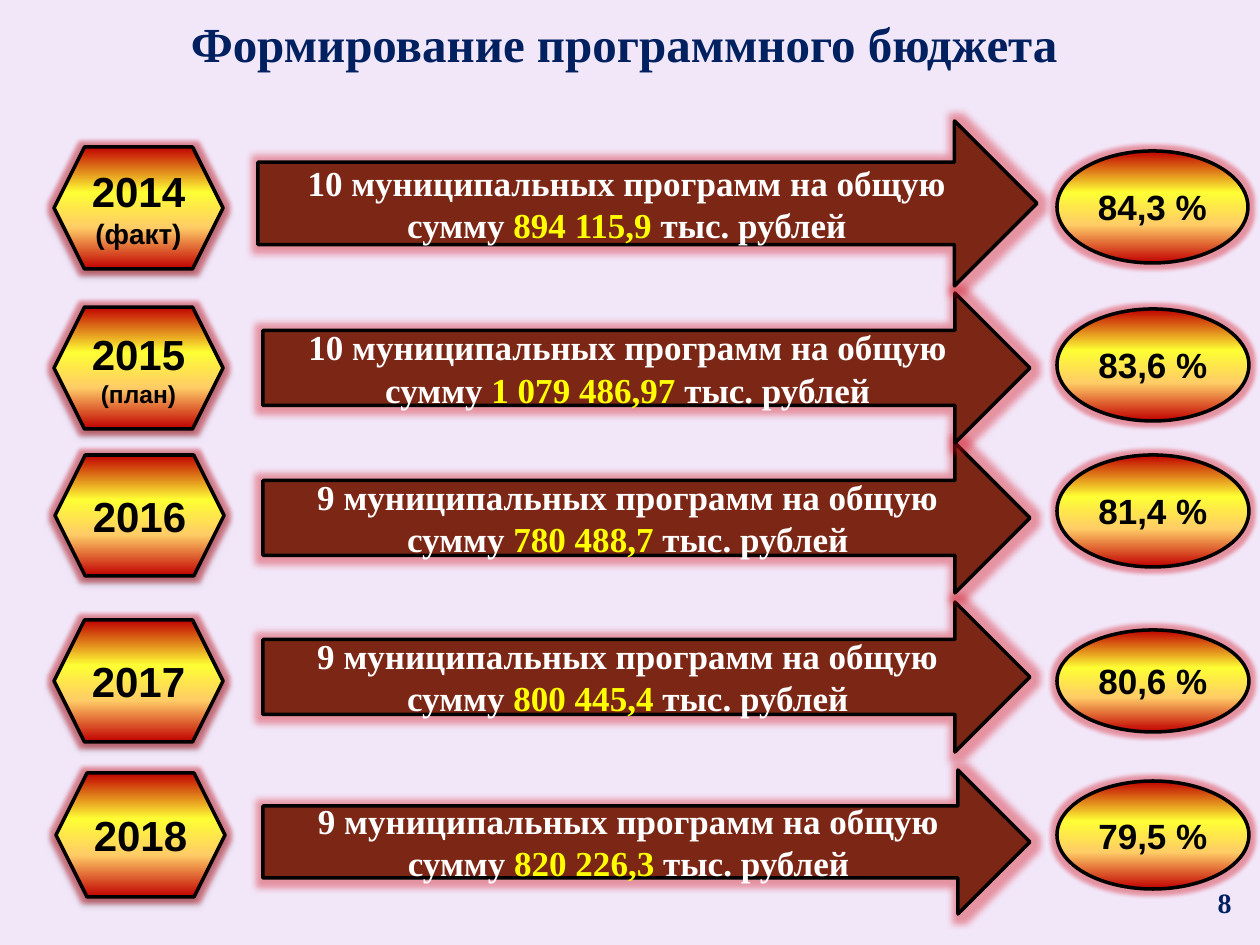
from lxml.etree import SubElement
from pptx import Presentation
from pptx.dml.color import RGBColor
from pptx.enum.shapes import MSO_SHAPE
from pptx.enum.text import MSO_ANCHOR, PP_ALIGN
from pptx.oxml.ns import qn
from pptx.util import Pt

SCALE = 914400 / 126
BLACK, NAVY, WHITE, GOLD = "000000", "002060", "FFFFFF", "FFFF00"
BROWN, GLOW = "7C2716", "D2131F"
STOPS = [(0, "C00000"), (34, "FFCC66"), (63, "FEFE34"), (100, "C00000")]
SERIF, SANS = "Times New Roman", "Arial"

ROWS = [
    ("2014", "(факт)", 16, 10, "894 115,9", "84,3 %",
     (54, 147, 169, 122), (258, 121, 779, 165), (1057, 151, 191, 112)),
    ("2015", "(план)", 14, 10, "1 079 486,97", "83,6 %",
     (54, 307, 169, 122), (263, 293, 767, 150), (1057, 309, 192, 112)),
    ("2016", "", 0, 9, "780 488,7", "81,4 %",
     (55, 455, 169, 121), (263, 443, 767, 150), (1057, 455, 192, 112)),
    ("2017", "", 0, 9, "800 445,4", "80,6 %",
     (54, 620, 169, 122), (263, 602, 767, 150), (1057, 630, 192, 102)),
    ("2018", "", 0, 9, "820 226,3", "79,5 %",
     (56, 773, 169, 124), (263, 770, 767, 144), (1057, 781, 192, 108)),
]


def px(n):
    return round(n * SCALE)


def rgb(code):
    return RGBColor.from_string(code)


def tint(node, code, alpha=100):
    color = SubElement(node, qn("a:srgbClr"), val=code)
    if alpha < 100:
        SubElement(color, qn("a:alpha"), val=str(alpha * 1000))


def shade(node):
    drop = SubElement(node, qn("a:outerShdw"), blurRad=str(Pt(3.1)), dist=str(Pt(1.8)),
                      dir="5400000", rotWithShape="0")
    tint(drop, BLACK, 35)


class Deck:
    """Holds the style and the current slide."""

    def __init__(self):
        self.file = Presentation()
        self.file.slide_width, self.file.slide_height = px(1260), px(945)
        self.slide = self.file.slides.add_slide(self.file.slide_layouts[5])
        fill = self.slide.background.fill
        fill.solid()
        fill.fore_color.rgb = rgb("F2E7F9")

    def text(self, shape, lines, align=PP_ALIGN.CENTER, **frame):
        body = shape.text_frame
        for key, val in {"word_wrap": True, **frame}.items():
            setattr(body, key, val)
        for i, line in enumerate(lines):
            para = body.add_paragraph() if i else body.paragraphs[0]
            para.alignment = align
            for words, size, face, color in line:
                run = para.add_run()
                run.text = words
                for key, val in {"size": Pt(size), "name": face, "bold": True}.items():
                    setattr(run.font, key, val)
                run.font.color.rgb = rgb(color)

    def title(self, words, box):
        shape = self.slide.shapes.title
        shape.left, shape.top, shape.width, shape.height = map(px, box)
        self.text(shape, [[(words, 28, SERIF, NAVY)]], vertical_anchor=MSO_ANCHOR.MIDDLE)
        props = shape.text_frame.paragraphs[0].runs[0].font._element
        effects = SubElement(props, qn("a:effectLst"))
        shade(effects)
        props.find(qn("a:solidFill")).addnext(effects)

    def label(self, words, box):
        shape = self.slide.shapes.add_textbox(*map(px, box))
        self.text(shape, [[(words, 16, SERIF, NAVY)]], PP_ALIGN.RIGHT)

    def shape(self, kind, box, lines, glow, fill=None, drop=False):
        shape = self.slide.shapes.add_shape(kind, *map(px, box))
        shape.shadow.inherit = False
        props = shape._element.spPr
        if fill:
            shape.fill.solid()
            shape.fill.fore_color.rgb = rgb(fill)
        else:
            shape.fill.gradient()
            shape.fill.gradient_angle = 90
            stops = props.find(qn("a:gradFill")).find(qn("a:gsLst"))
            stops.clear()
            for pos, code in STOPS:
                tint(SubElement(stops, qn("a:gs"), pos=str(pos * 1000)), code)
        shape.line.color.rgb = rgb(BLACK)
        shape.line.width = Pt(2)
        effects = props.find(qn("a:effectLst"))
        tint(SubElement(effects, qn("a:glow"), rad=str(Pt(glow))), GLOW, 40)
        if drop:
            shade(effects)
        self.text(shape, lines, vertical_anchor=MSO_ANCHOR.MIDDLE)

    def year(self, box, year, note, size):
        lines = [[(year, 24, SANS, BLACK)]]
        if note:
            lines.append([(note, size, SANS, BLACK)])
        self.shape(MSO_SHAPE.HEXAGON, box, lines, 5, drop=True)

    def arrow(self, box, count, total):
        parts = [("сумму ", WHITE), (total + " ", GOLD), ("тыс. рублей", WHITE)]
        lines = [[(f"{count} муниципальных программ на общую", 20, SERIF, WHITE)],
                 [(words, 20, SERIF, color) for words, color in parts]]
        self.shape(MSO_SHAPE.RIGHT_ARROW, box, lines, 8, BROWN)

    def share(self, box, words):
        self.shape(MSO_SHAPE.OVAL, box, [[(words, 20, SANS, BLACK)]], 5)


def main():
    deck = Deck()
    deck.title("Формирование программного бюджета", (58, 2, 1132, 82))
    deck.label("8", (1185, 879, 59, 49))
    for year, note, size, count, total, part, left, mid, right in reversed(ROWS):
        deck.year(left, year, note, size)
        deck.arrow(mid, count, total)
        deck.share(right, part)
    deck.file.save("out.pptx")


if __name__ == "__main__":
    main()
